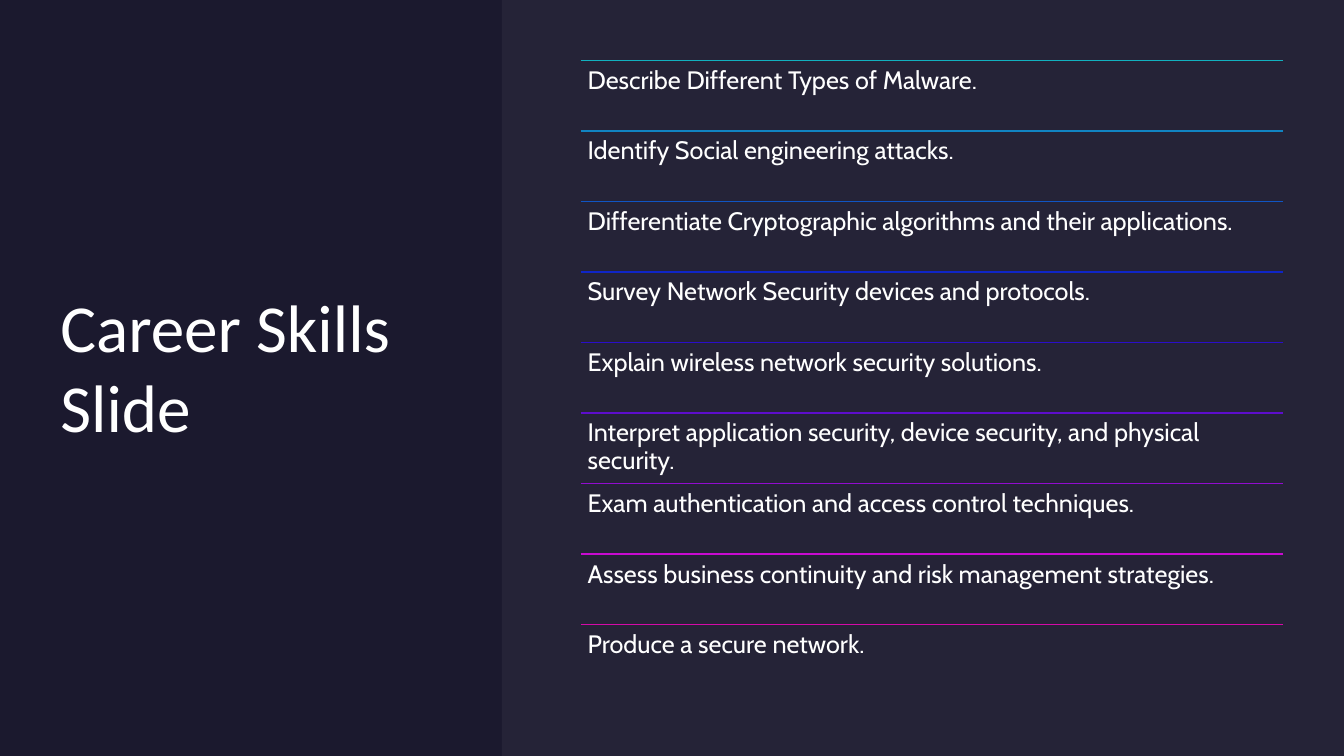
from lxml import etree
from pptx import Presentation
from pptx import util as u
from pptx.dml.color import RGBColor
from pptx.enum import shapes, text
from pptx.oxml.ns import qn

COLOURS = {"background": "1B192E", "panel": "E4E3F0", "text": "FFFFFF"}
SKILLS = [
    ("Describe Different Types of Malware.", "12B1BF"),
    ("Identify Social engineering attacks.", "1184C2"),
    ("Differentiate Cryptographic algorithms and their applications.", "1055C4"),
    ("Survey Network Security devices and protocols.", "0F25C7"),
    ("Explain wireless network security solutions.", "2A0EC9"),
    ("Interpret application security, device security, and physical security.", "5D0DCC"),
    ("Exam authentication and access control techniques.", "910CCF"),
    ("Assess business continuity and risk management strategies.", "C80BD1"),
    ("Produce a secure network.", "D40AA8"),
]


def colour(value):
    return RGBColor.from_string(value)


def write(shape, words, font, size, anchor, inset=0, spacing=1.0):
    frame = shape.text_frame
    frame.word_wrap = True
    frame.auto_size = text.MSO_AUTO_SIZE.NONE
    frame.vertical_anchor = anchor
    frame.margin_left = frame.margin_right = u.Cm(inset)
    frame.margin_top = frame.margin_bottom = u.Cm(inset)
    para = frame.paragraphs[0]
    para.alignment = text.PP_ALIGN.LEFT
    para.line_spacing = spacing
    span = para.add_run()
    span.text = words
    span.font.name = font
    span.font.size = u.Pt(size)
    span.font.color.rgb = colour(COLOURS["text"])


def place_title(page, left, top, width, height):
    title = page.shapes.title
    title.left, title.top = u.Cm(left), u.Cm(top)
    title.width, title.height = u.Cm(width), u.Cm(height)
    write(title, "Career Skills Slide", "Calibri", 48, text.MSO_ANCHOR.MIDDLE)


def add_panel(page, left, top, width, height, opacity):
    panel = page.shapes.add_shape(
        shapes.MSO_SHAPE.RECTANGLE, u.Cm(left), u.Cm(top), u.Cm(width), u.Cm(height))
    panel.shadow.inherit = False
    panel.line.fill.background()
    panel.fill.solid()
    panel.fill.fore_color.rgb = colour(COLOURS["panel"])
    tint = panel.fill._xPr.find(".//" + qn("a:srgbClr"))
    etree.SubElement(tint, qn("a:alpha"), val=str(opacity * 1000))


def add_rule(page, left, top, width, line_colour):
    rule = page.shapes.add_connector(
        shapes.MSO_CONNECTOR.STRAIGHT, u.Cm(left), u.Cm(top), u.Cm(left + width), u.Cm(top))
    rule.line.color.rgb = colour(line_colour)
    rule.line.width = u.Pt(1)
    etree.SubElement(rule._element.spPr, qn("a:effectLst"))


def add_skills(page, left, top, width, height):
    """Stack the skills in equal rows, each under its own coloured rule."""
    row_height = height / len(SKILLS)
    for index, (skill, line_colour) in enumerate(SKILLS):
        row_top = top + index * row_height
        add_rule(page, left, row_top, width, line_colour)
        box = page.shapes.add_textbox(
            u.Cm(left), u.Cm(row_top), u.Cm(width), u.Cm(row_height))
        write(box, skill, "Cabin", 18, text.MSO_ANCHOR.TOP, inset=0.18, spacing=0.9)


def main():
    deck = Presentation()
    deck.slide_width, deck.slide_height = u.Cm(33.87), u.Cm(19.05)
    page = deck.slides.add_slide(deck.slide_layouts.get_by_name("Title Only"))
    page.background.fill.solid()
    page.background.fill.fore_color.rgb = colour(COLOURS["background"])
    place_title(page, 1.52, 1.52, 9.91, 15.39)
    add_panel(page, 12.65, 0, 21.22, 19.05, opacity=5)
    add_skills(page, 14.63, 1.52, 17.7, 16)
    deck.save("out.pptx")


if __name__ == "__main__":
    main()
